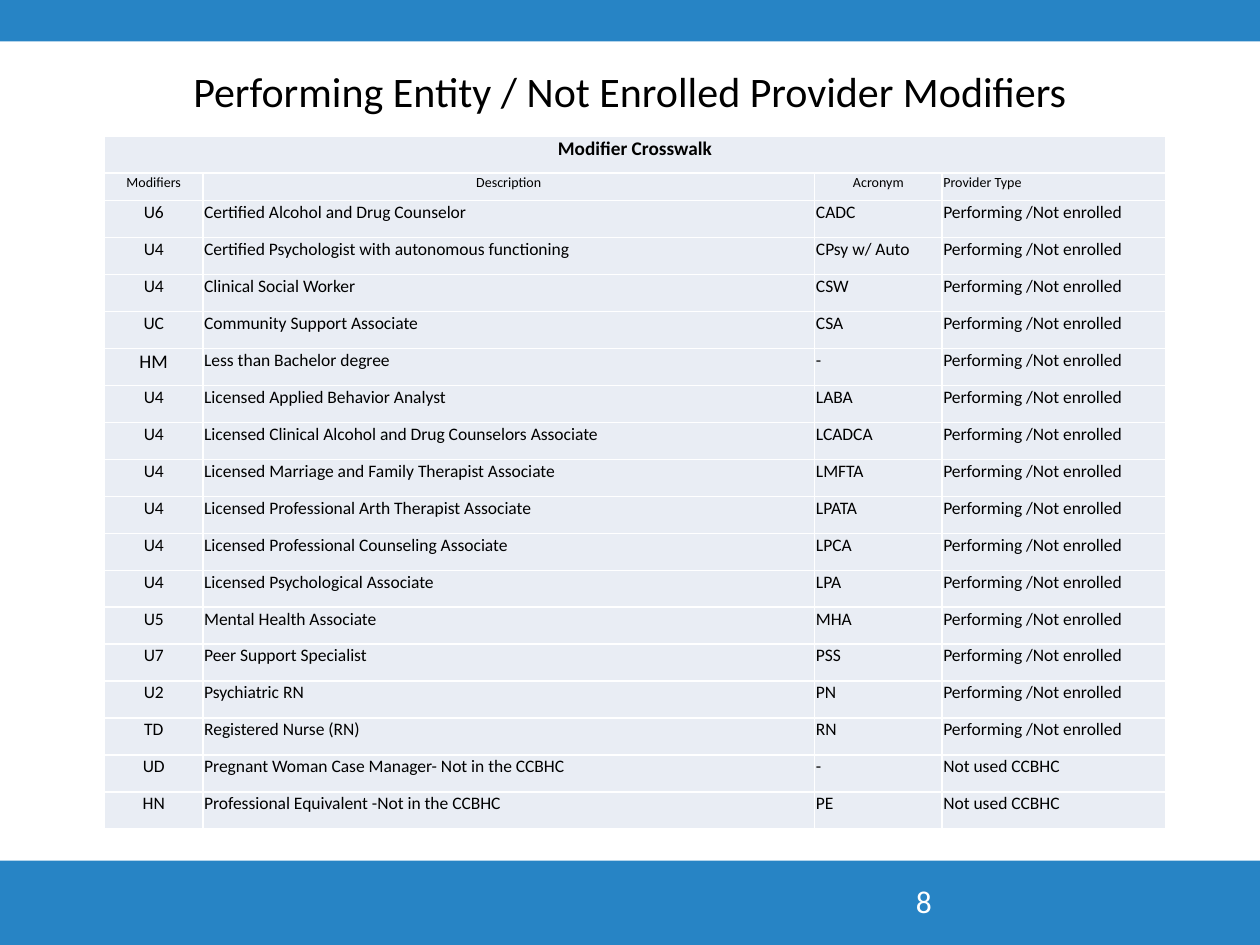
from lxml.etree import SubElement
from pptx import Presentation
from pptx.dml.color import RGBColor
from pptx.enum.shapes import MSO_SHAPE
from pptx.enum.text import MSO_ANCHOR as ANCHOR, PP_ALIGN as ALIGN
from pptx.oxml.ns import qn
from pptx.util import Inches, Pt

BLUE, PALE, WHITE, BLACK = "2784C5", "E9EDF4", "FFFFFF", "000000"
COLS = (0.78, 4.85, 1.01, 1.77)
TITLE_H, HEAD_H = 0.29, 0.22
HEADINGS = ("Modifiers", "Description", "Acronym", "Provider Type")
ENROLLMENT = "Performing /Not enrolled"
UNUSED = "Not used CCBHC"
MODIFIERS = (
    ("U6", "Certified Alcohol and Drug Counselor", "CADC", ENROLLMENT),
    ("U4", "Certified Psychologist with autonomous functioning", "CPsy w/ Auto", ENROLLMENT),
    ("U4", "Clinical Social Worker", "CSW", ENROLLMENT),
    ("UC", "Community Support Associate", "CSA", ENROLLMENT),
    ("HM", "Less than Bachelor degree", "-", ENROLLMENT),
    ("U4", "Licensed Applied Behavior Analyst", "LABA", ENROLLMENT),
    ("U4", "Licensed Clinical Alcohol and Drug Counselors Associate", "LCADCA", ENROLLMENT),
    ("U4", "Licensed Marriage and Family Therapist Associate", "LMFTA", ENROLLMENT),
    ("U4", "Licensed Professional Arth Therapist Associate", "LPATA", ENROLLMENT),
    ("U4", "Licensed Professional Counseling Associate", "LPCA", ENROLLMENT),
    ("U4", "Licensed Psychological Associate", "LPA", ENROLLMENT),
    ("U5", "Mental Health Associate", "MHA", ENROLLMENT),
    ("U7", "Peer Support Specialist", "PSS", ENROLLMENT),
    ("U2", "Psychiatric RN", "PN", ENROLLMENT),
    ("TD", "Registered Nurse (RN)", "RN", ENROLLMENT),
    ("UD", "Pregnant Woman Case Manager- Not in the CCBHC", "-", UNUSED),
    ("HN", "Professional Equivalent -Not in the CCBHC", "PE", UNUSED),
)


def rgb(color):
    """Turn a hex string into a colour."""
    return RGBColor.from_string(color)


def set_attrs(obj, values):
    """Set each attribute named in a dict."""
    for name, value in values.items():
        setattr(obj, name, value)


def write(tf, text, size, color=BLACK, align=ALIGN.LEFT, bold=False):
    """Write one formatted paragraph into a text frame."""
    p = tf.paragraphs[0]
    p.alignment = align
    r = p.add_run()
    r.text = text
    set_attrs(r.font, {"name": "Calibri", "size": Pt(size), "bold": bold})
    r.font.color.rgb = rgb(color)


def add_band(s, box):
    """Fill a box with a plain blue band."""
    sp = s.shapes.add_shape(MSO_SHAPE.RECTANGLE, *map(Inches, box))
    sp.shadow.inherit = False
    sp.fill.solid()
    sp.fill.fore_color.rgb = rgb(BLUE)
    sp.line.fill.background()


def add_text(s, box, text, size, anchor=ANCHOR.TOP, **style):
    """Place a wrapping text box."""
    tf = s.shapes.add_textbox(*map(Inches, box)).text_frame
    set_attrs(tf, {"word_wrap": True, "vertical_anchor": anchor})
    write(tf, text, size, **style)


def add_borders(cell):
    """Draw thin white lines on the four sides of a cell."""
    props = cell._tc.get_or_add_tcPr()
    for i, side in enumerate(("lnL", "lnR", "lnT", "lnB")):
        ln = props.makeelement(qn(f"a:{side}"), {"w": str(Pt(1))})
        fill = SubElement(ln, qn("a:solidFill"))
        SubElement(fill, qn("a:srgbClr"), val=WHITE)
        props.insert(i, ln)


def fill_cell(cell, text, size, **style):
    """Format a cell and write its text."""
    edge = Inches(0.01)
    set_attrs(cell, {"margin_left": edge, "margin_right": edge,
                     "margin_top": edge, "margin_bottom": 0})
    cell.fill.solid()
    cell.fill.fore_color.rgb = rgb(PALE)
    add_borders(cell)
    if text:
        write(cell.text_frame, text, size, **style)


def add_crosswalk(s, box):
    """Build the modifier table inside a box."""
    rows = (("Modifier Crosswalk", "", "", ""), HEADINGS) + MODIFIERS
    table = s.shapes.add_table(len(rows), len(COLS), *map(Inches, box)).table
    set_attrs(table, {"first_row": False, "horz_banding": False})
    for col, width in zip(table.columns, COLS):
        col.width = Inches(box[2] * width / sum(COLS))
    row_h = (box[3] - HEAD_H) / (len(rows) - 1)
    for i, texts in enumerate(rows):
        table.rows[i].height = Inches(HEAD_H if i == 1 else row_h)
        for j, text in enumerate(texts):
            size = 8 if i == 1 else 11 if i == 0 or text == "HM" else 10
            centered = j == 0 or (i == 1 and j < 3)
            fill_cell(table.cell(i, j), text, size, bold=i == 0,
                      align=ALIGN.CENTER if centered else ALIGN.LEFT)
    table.cell(0, 0).merge(table.cell(0, len(COLS) - 1))


def build_slide(prs):
    """Lay out the bands, title, page number and table."""
    s = prs.slides.add_slide(prs.slide_layouts[6])
    add_band(s, (0, 0, 10, 0.33))
    add_band(s, (0, 6.83, 10, 0.67))
    add_text(s, (0.5, 0.41, 9, 0.62), "Performing Entity / Not Enrolled Provider Modifiers",
             24, ANCHOR.MIDDLE, align=ALIGN.CENTER)
    add_text(s, (7.17, 6.95, 2.33, 0.4), "8", 18, color=WHITE)
    add_crosswalk(s, (0.83, 1.08, 8.42, 5.5))


def main():
    """Create and save the presentation."""
    prs = Presentation()
    set_attrs(prs, {"slide_width": Inches(10), "slide_height": Inches(7.5)})
    build_slide(prs)
    prs.save("out.pptx")


if __name__ == "__main__":
    main()
